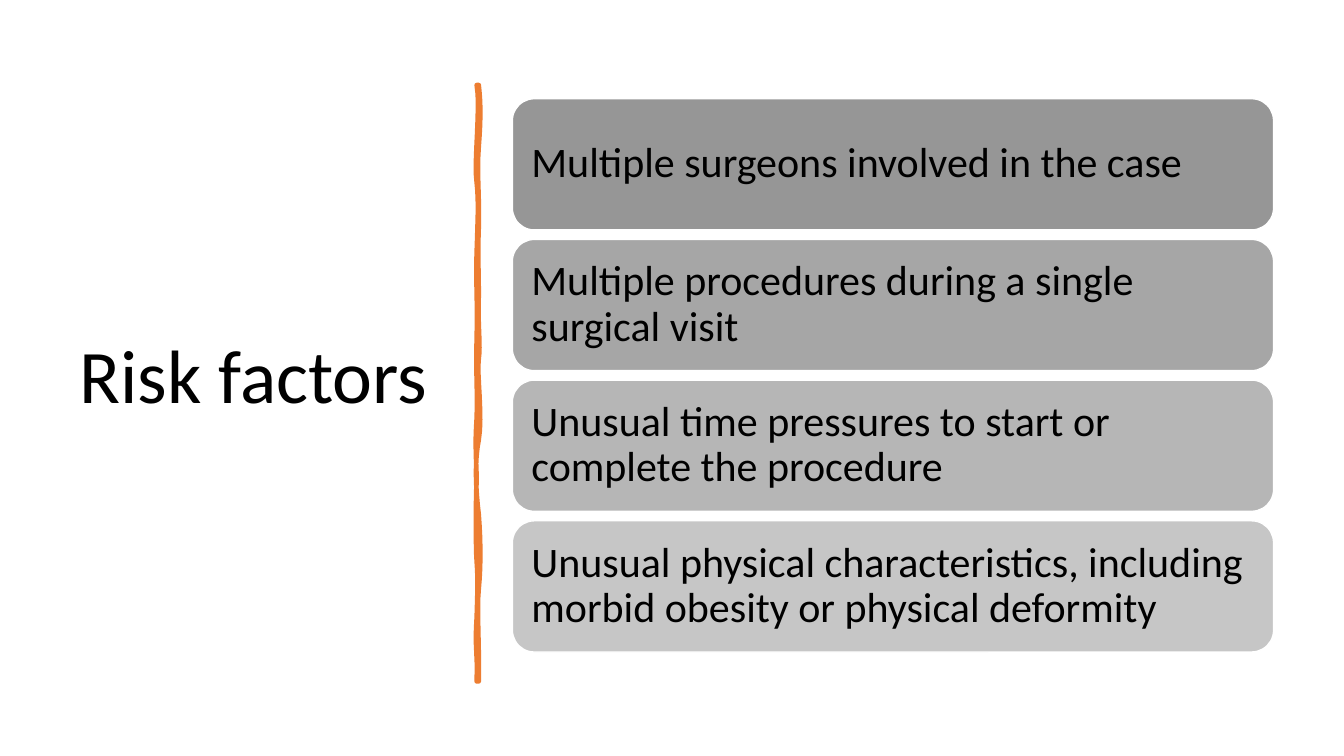
from pptx import Presentation
from pptx.dml.color import RGBColor
from pptx.enum.shapes import MSO_SHAPE
from pptx.enum.text import MSO_ANCHOR, MSO_AUTO_SIZE, PP_ALIGN
from pptx.oxml.ns import qn
from pptx.util import Emu, Pt
from lxml import etree

ROUND_RECT = MSO_SHAPE.ROUNDED_RECTANGLE
MIDDLE = MSO_ANCHOR.MIDDLE
LEFT = PP_ALIGN.LEFT
NO_FIT = MSO_AUTO_SIZE.NONE
TITLE_ONLY = 5
EMU_PER_PX = 9525

COLORS = {
    "text": "000000",
    "border": "FFFFFF",
    "accent": "ED7D31",
    "gray1": "969696",
    "gray2": "A6A6A6",
    "gray3": "B6B6B6",
    "gray4": "C6C6C6",
}

RISKS = [
    ("Multiple surgeons involved in the case", "gray1"),
    ("Multiple procedures during a single surgical visit", "gray2"),
    ("Unusual time pressures to start or complete the procedure", "gray3"),
    ("Unusual physical characteristics, including morbid obesity "
     "or physical deformity", "gray4"),
]

# Divider edges in px: a start point, then curves of two controls and an end
RIGHT_EDGE = [
    (456, 81),
    (458, 98), (458, 114), (456, 140),
    (454, 166), (457, 187), (456, 217),
    (455, 247), (456, 252), (456, 282),
    (455, 312), (458, 328), (456, 342),
    (454, 355), (460, 397), (456, 419),
    (452, 439), (453, 465), (456, 490),
    (458, 515), (458, 541), (456, 561),
    (454, 579), (457, 624), (456, 649),
]
LEFT_EDGE = [
    (454, 649),
    (455, 620), (452, 618), (454, 588),
    (455, 560), (455, 547), (454, 535),
    (453, 522), (453, 475), (454, 458),
    (454, 441), (452, 427), (454, 398),
    (455, 371), (453, 358), (454, 322),
    (455, 286), (453, 270), (454, 240),
    (455, 209), (456, 192), (454, 174),
    (451, 156), (458, 100), (454, 81),
]


def px(n):
    return Emu(round(n * EMU_PER_PX))


def flatten(edge, steps=8):
    """Turn a chain of cubic curves into points."""
    points = [edge[0]]
    for i in range(0, len(edge) - 1, 3):
        a, b, c, d = edge[i:i + 4]
        for k in range(1, steps + 1):
            t = k / steps
            u = 1 - t
            weights = (u ** 3, 3 * u * u * t, 3 * u * t * t, t ** 3)
            points.append(tuple(
                sum(w * p[axis] for w, p in zip(weights, (a, b, c, d)))
                for axis in (0, 1)))
    return points


class SlideBuilder:
    font = "Calibri"

    def __init__(self, slide):
        self.slide = slide

    def color(self, name):
        return RGBColor.from_string(COLORS[name])

    def paint(self, sp, fill, line, width):
        sp.shadow.inherit = False
        sp.fill.solid()
        sp.fill.fore_color.rgb = self.color(fill)
        sp.line.color.rgb = self.color(line)
        sp.line.width = Pt(width)

    def set_text(self, tf, text, size):
        tf.text = text
        tf.word_wrap = True
        tf.auto_size = NO_FIT
        tf.vertical_anchor = MIDDLE
        p = tf.paragraphs[0]
        p.alignment = LEFT
        p.line_spacing = 0.9
        font = p.runs[0].font
        font.name = self.font
        font.size = Pt(size)
        font.color.rgb = self.color("text")

    def title(self, text, x, y, w, h, size):
        sp = self.slide.shapes.title
        sp.left, sp.top, sp.width, sp.height = map(px, (x, y, w, h))
        self.set_text(sp.text_frame, text, size)

    def card(self, text, x, y, w, h, fill, size=30, margin=12):
        sp = self.slide.shapes.add_shape(ROUND_RECT, *map(px, (x, y, w, h)))
        self.paint(sp, fill, "border", 1)
        tf = sp.text_frame
        tf.margin_left = tf.margin_right = px(margin)
        tf.margin_top = tf.margin_bottom = px(margin)
        self.set_text(tf, text, size)

    def brush_line(self, edges, color, width):
        points = [(px(x), px(y)) for edge in edges for x, y in flatten(edge)]
        builder = self.slide.shapes.build_freeform(*points[0])
        builder.add_line_segments(points[1:], close=True)
        sp = builder.convert_to_shape()
        self.paint(sp, color, color, width)
        ln = sp.element.spPr.find(qn("a:ln"))
        etree.SubElement(ln, qn("a:round"))


def main():
    prs = Presentation()
    prs.slide_width, prs.slide_height = px(1280), px(720)
    s = SlideBuilder(prs.slides.add_slide(prs.slide_layouts[TITLE_ONLY]))

    # Title on the left
    s.title("Risk factors", 66, 67, 359, 587, 54)

    # Hand-drawn divider
    s.brush_line((RIGHT_EDGE, LEFT_EDGE), "accent", 3.25)

    # Stack of risk cards
    top, height, gap = 94, 125, 9
    for i, (text, fill) in enumerate(RISKS):
        s.card(text, 488, top + i * (height + gap), 725, height, fill)

    prs.save("out.pptx")


if __name__ == "__main__":
    main()
